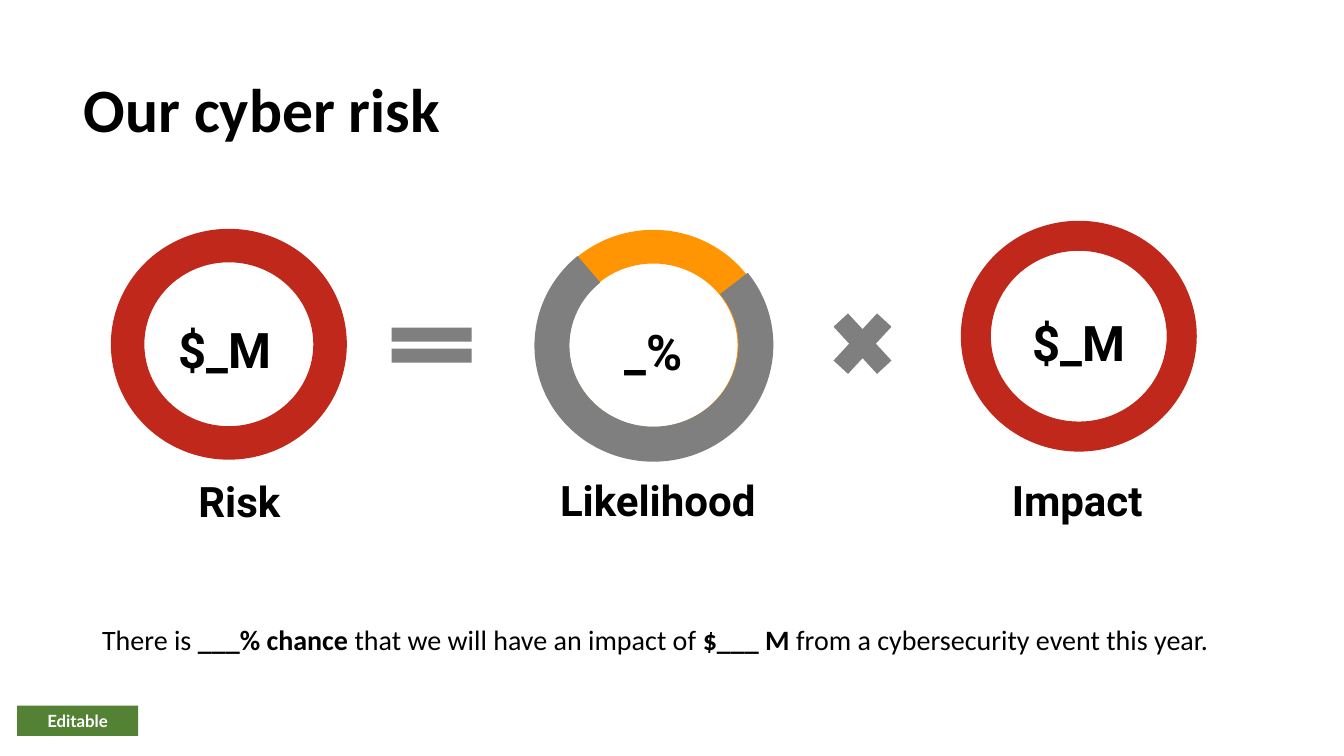
from dataclasses import dataclass

from pptx import Presentation
from pptx.dml.color import RGBColor
from pptx.enum.shapes import MSO_SHAPE
from pptx.enum.text import MSO_ANCHOR, MSO_AUTO_SIZE, PP_ALIGN
from pptx.util import Inches, Pt


@dataclass(frozen=True)
class Theme:
    """Colours, fonts and type sizes of the slide."""
    red: str = "BF281B"
    orange: str = "FF9502"
    grey: str = "7F7F7F"
    green: str = "548235"
    black: str = "000000"
    white: str = "FFFFFF"
    body: str = "Calibri"
    figure: str = "Roboto"
    tag: str = "Lato"
    title_size: int = 44
    value_size: int = 35
    label_size: int = 30
    body_size: int = 20
    tag_size: int = 12


THEME = Theme()
TITLE = "Our cyber risk"
RING_SIZE = (2.34, 2.29)
FACTORS = [
    {"value": "$_M", "label": "Risk", "ring": (1.1, 2.27), "band": 0.145,
     "color": THEME.red, "value_at": (1.46, 3.12, 1.54, 0.74), "label_at": (1.76, 4.67, 1.23, 0.64)},
    {"value": "_%", "label": "Likelihood", "ring": (5.31, 2.28), "band": 0.146,
     "color": THEME.orange, "value_at": (5.69, 3.14, 1.58, 0.74), "label_at": (5.26, 4.66, 2.53, 0.64)},
    {"value": "$_M", "label": "Impact", "ring": (9.53, 2.19), "band": 0.13,
     "color": THEME.red, "value_at": (9.93, 3.05, 1.54, 0.74), "label_at": (9.76, 4.66, 1.85, 0.64)},
]
ARC_AT = (5.3, 2.27, 2.37, 2.31)
ARC_ANGLES = (146.49, 53.64)
ARC_BAND = 0.15
ARC_ROTATION = 175.8
ANGLE_UNIT = 0.6
OPERATORS = [
    (MSO_SHAPE.MATH_EQUAL, (3.74, 3.13, 1.08, 0.59), (0.235, 0.118)),
    (MSO_SHAPE.MATH_MULTIPLY, (8.14, 2.96, 0.83, 0.9), (0.235,)),
]
SENTENCE = [
    ("There is ", False),
    ("___% chance", True),
    (" that we will have an impact of ", False),
    ("$___ M", True),
    (" from a cybersecurity event this year. ", False),
]


def set_all(target, values):
    """Set every attribute named in a dict of values."""
    for name, value in values.items():
        setattr(target, name, value)


def write(holder, runs, face, size, color, align=PP_ALIGN.CENTER, inset=0.05, **frame_format):
    """Write runs of (text, bold) as one paragraph and return it."""
    frame = holder.text_frame
    set_all(frame, {
        "word_wrap": True,
        "margin_left": Inches(0.1), "margin_right": Inches(0.1),
        "margin_top": Inches(inset), "margin_bottom": Inches(inset),
        "auto_size": MSO_AUTO_SIZE.SHAPE_TO_FIT_TEXT,
        **frame_format,
    })
    paragraph = frame.paragraphs[0]
    paragraph.alignment = align
    for text, bold in runs:
        run = paragraph.add_run()
        run.text = text
        set_all(run.font, {"name": face, "size": Pt(size), "bold": bold})
        run.font.color.rgb = RGBColor.from_string(color)
    return paragraph


def draw(slide, preset, place, color, adjustments=()):
    """Add a flat, unlined preset shape."""
    figure = slide.shapes.add_shape(preset, *map(Inches, place))
    figure.shadow.inherit = False
    figure.fill.solid()
    figure.fill.fore_color.rgb = RGBColor.from_string(color)
    figure.line.fill.background()
    for index, amount in enumerate(adjustments):
        figure.adjustments[index] = amount
    return figure


def add_text(slide, place, runs, face, size, **options):
    """Add a black text box."""
    box = slide.shapes.add_textbox(*map(Inches, place))
    write(box, runs, face, size, THEME.black, **options)


def main():
    """Build and save the cyber risk slide."""
    deck = Presentation()
    set_all(deck, {"slide_width": Inches(13.33), "slide_height": Inches(7.5)})
    slide = deck.slides.add_slide(deck.slide_layouts[5])

    title = slide.shapes.title
    set_all(title, {"left": Inches(0.73), "top": Inches(0.39),
                    "width": Inches(11.5), "height": Inches(1.45)})
    heading = write(title, [(TITLE, True)], THEME.body, THEME.title_size, THEME.black,
                    align=PP_ALIGN.LEFT, auto_size=MSO_AUTO_SIZE.NONE,
                    vertical_anchor=MSO_ANCHOR.MIDDLE)
    heading.line_spacing = 0.9

    for factor in FACTORS:
        draw(slide, MSO_SHAPE.DONUT, factor["ring"] + RING_SIZE, factor["color"], [factor["band"]])
        for part, size in (("value", THEME.value_size), ("label", THEME.label_size)):
            add_text(slide, factor[part + "_at"], [(factor[part], True)], THEME.figure, size)

    arc_shape = [angle * ANGLE_UNIT for angle in ARC_ANGLES] + [ARC_BAND]
    remainder = draw(slide, MSO_SHAPE.BLOCK_ARC, ARC_AT, THEME.grey, arc_shape)
    remainder.rotation = ARC_ROTATION

    for preset, place, adjustments in OPERATORS:
        draw(slide, preset, place, THEME.grey, adjustments)

    add_text(slide, (0.78, 6.08, 11.5, 0.54), SENTENCE, THEME.body, THEME.body_size, inset=0.1)
    tag = draw(slide, MSO_SHAPE.RECTANGLE, (0.17, 7, 1.2, 0.3), THEME.green)
    write(tag, [("Editable", True)], THEME.tag, THEME.tag_size, THEME.white)

    deck.save("out.pptx")


if __name__ == "__main__":
    main()
